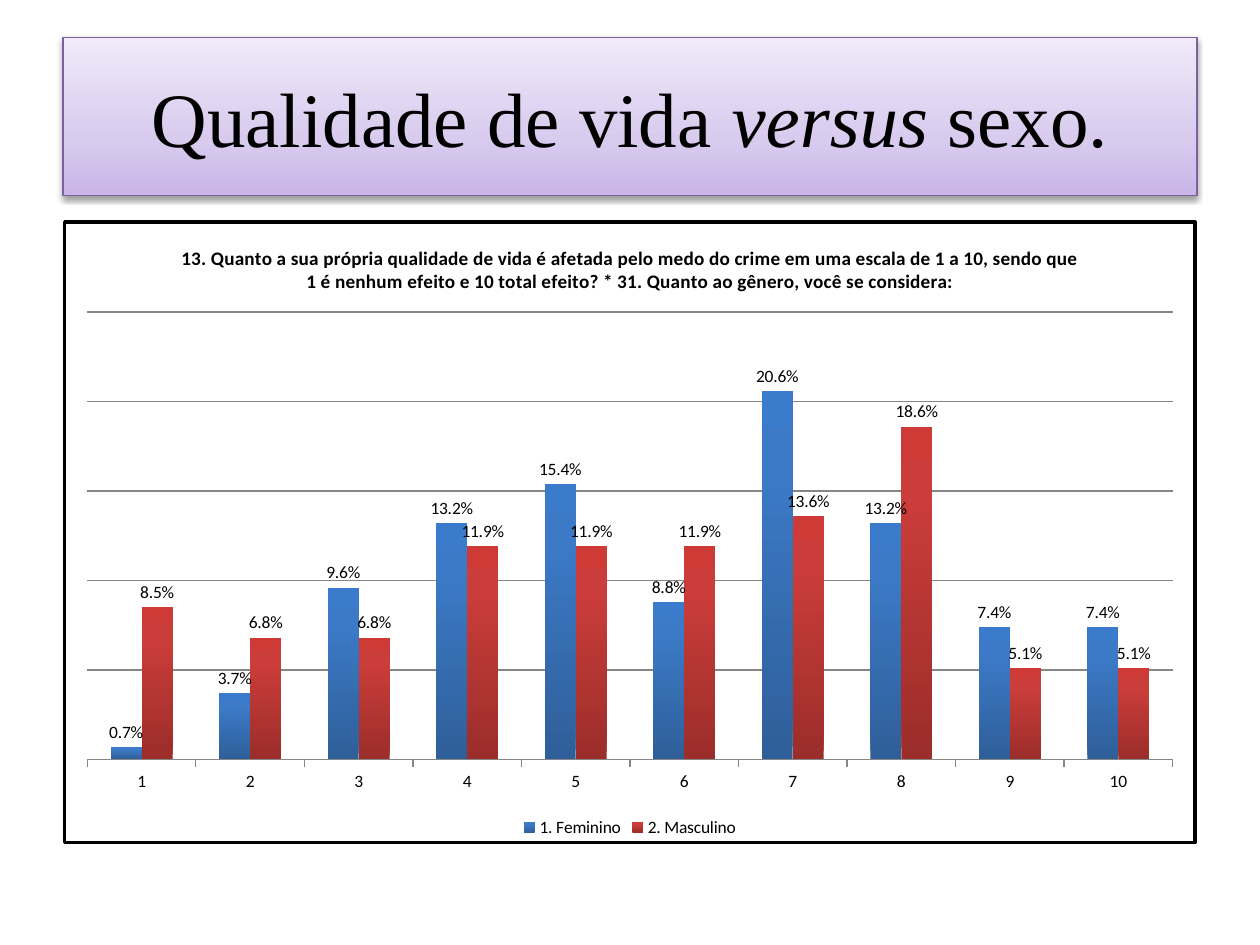
import pptx
import pptx.chart.data
import pptx.dml.color
import pptx.enum.chart
import pptx.enum.shapes
import pptx.enum.text
import pptx.oxml
import pptx.oxml.ns
import pptx.util

TITLE = [("Qualidade de vida ", False), ("versus", True), (" sexo.", False)]
QUESTION = ("13. Quanto a sua própria qualidade de vida é afetada pelo medo do crime "
            "em uma escala de 1 a 10, sendo que 1 é nenhum efeito e 10 total efeito? "
            "* 31. Quanto ao gênero, você se considera:")
SERIES = {  # percentages for answers 1 to 10
    "1. Feminino": [0.7, 3.7, 9.6, 13.2, 15.4, 8.8, 20.6, 13.2, 7.4, 7.4],
    "2. Masculino": [8.5, 6.8, 6.8, 11.9, 11.9, 11.9, 13.6, 18.6, 5.1, 5.1],
}
THEME = {
    "title_font": "Times New Roman", "title_size": 44,
    "chart_font": "Calibri", "chart_size": 10, "question_size": 11,
    "text": "000000", "grid": "868686", "title_line": "7D60A0",
    "title_fill": [(0, "C9B5E8"), (35, "D8CBEE"), (100, "F0EAF9")],
    "bar_fills": [
        [(0, "2E5F99"), (80, "3C7AC7"), (100, "3A7CCB")],
        [(0, "9B2D2A"), (80, "CB3D3A"), (100, "CE3B37")],
    ],
}
WIDTH, HEIGHT = 10, 7.5
MARGIN = WIDTH / 20
TITLE_BOX = (MARGIN, HEIGHT * 0.04, WIDTH - 2 * MARGIN, HEIGHT / 6)
CHART_BOX = (MARGIN, 1.75, WIDTH - 2 * MARGIN, HEIGHT * 0.66)
PERCENT = "0.0%"
NS = pptx.oxml.ns.nsdecls("a")


def rgb(value):
    return pptx.dml.color.RGBColor.from_string(value)


def inches(box):
    return [pptx.util.Inches(v) for v in box]


def style_font(font, name, size, bold=False):
    font.name, font.size, font.bold = name, pptx.util.Pt(size), bold
    font.color.rgb = rgb(THEME["text"])


def fill_upward(fill, element, stops):
    """Gradient from bottom to top with any number of (percent, colour) stops."""
    fill.gradient()
    fill.gradient_angle = 90
    old = element.find(".//" + pptx.oxml.ns.qn("a:gsLst"))
    items = "".join(f'<a:gs pos="{pos * 1000}"><a:srgbClr val="{color}"/></a:gs>'
                    for pos, color in stops)
    old.getparent().replace(old, pptx.oxml.parse_xml(f"<a:gsLst {NS}>{items}</a:gsLst>"))


def add_title(slide):
    sp = slide.shapes.add_shape(pptx.enum.shapes.MSO_SHAPE.RECTANGLE, *inches(TITLE_BOX))
    fill_upward(sp.fill, sp.element, THEME["title_fill"])
    sp.line.color.rgb = rgb(THEME["title_line"])
    sp.line.width = pptx.util.Pt(0.75)
    blur, dist = pptx.util.Pt(3.1), pptx.util.Pt(1.6)
    sp.element.spPr.append(pptx.oxml.parse_xml(
        f'<a:effectLst {NS}><a:outerShdw blurRad="{blur}" dist="{dist}" dir="5400000" '
        'rotWithShape="0"><a:srgbClr val="000000"><a:alpha val="38000"/></a:srgbClr>'
        '</a:outerShdw></a:effectLst>'))
    tf = sp.text_frame
    tf.word_wrap = True
    tf.vertical_anchor = pptx.enum.text.MSO_ANCHOR.MIDDLE
    p = tf.paragraphs[0]
    p.alignment = pptx.enum.text.PP_ALIGN.CENTER
    style_font(p.font, THEME["title_font"], THEME["title_size"])
    for text, italic in TITLE:
        r = p.add_run()
        r.text, r.font.italic = text, italic


def add_survey_chart(slide):
    data = pptx.chart.data.CategoryChartData(number_format=PERCENT)
    data.categories = [str(n) for n in range(1, 11)]
    for name, values in SERIES.items():
        data.add_series(name, [round(v / 100, 3) for v in values])
    chart = slide.shapes.add_chart(pptx.enum.chart.XL_CHART_TYPE.COLUMN_CLUSTERED,
                                   *inches(CHART_BOX), data).chart
    style_font(chart.font, THEME["chart_font"], THEME["chart_size"])

    chart.has_title = True
    p = chart.chart_title.text_frame.paragraphs[0]
    p.text = QUESTION
    style_font(p.font, THEME["chart_font"], THEME["question_size"], bold=True)
    chart.chart_title.include_in_layout = False

    chart.has_legend = True
    chart.legend.position = pptx.enum.chart.XL_LEGEND_POSITION.BOTTOM
    chart.legend.include_in_layout = False

    axis = chart.value_axis
    axis.minimum_scale, axis.maximum_scale, axis.major_unit = 0, 0.25, 0.05
    axis.visible = False
    axis.has_major_gridlines = True
    axis.tick_labels.number_format = PERCENT
    axis.tick_labels.number_format_is_linked = False
    for line in (axis.major_gridlines.format.line, chart.category_axis.format.line):
        line.color.rgb = rgb(THEME["grid"])
        line.width = pptx.util.Pt(0.75)
    chart.category_axis.major_tick_mark = pptx.enum.chart.XL_TICK_MARK.OUTSIDE

    plot = chart.plots[0]
    plot.gap_width, plot.overlap, plot.vary_by_categories = 150, 0, False
    for series, stops in zip(plot.series, THEME["bar_fills"]):
        fill_upward(series.format.fill, series._element, stops)
        labels = series.data_labels
        labels.show_value = True
        labels.number_format, labels.number_format_is_linked = PERCENT, False
        labels.position = pptx.enum.chart.XL_LABEL_POSITION.OUTSIDE_END

    frame = pptx.oxml.parse_xml(
        f'<c:spPr {pptx.oxml.ns.nsdecls("c", "a")}>'
        '<a:solidFill><a:srgbClr val="FFFFFF"/></a:solidFill>'
        f'<a:ln w="{pptx.util.Pt(2)}"><a:solidFill><a:srgbClr val="{THEME["text"]}"/>'
        '</a:solidFill></a:ln></c:spPr>')
    chart._chartSpace.find(pptx.oxml.ns.qn("c:chart")).addnext(frame)


def main():
    prs = pptx.Presentation()
    prs.slide_width, prs.slide_height = inches((WIDTH, HEIGHT))
    slide = prs.slides.add_slide(prs.slide_layouts[6])
    add_title(slide)
    add_survey_chart(slide)
    prs.save("out.pptx")


if __name__ == "__main__":
    main()
